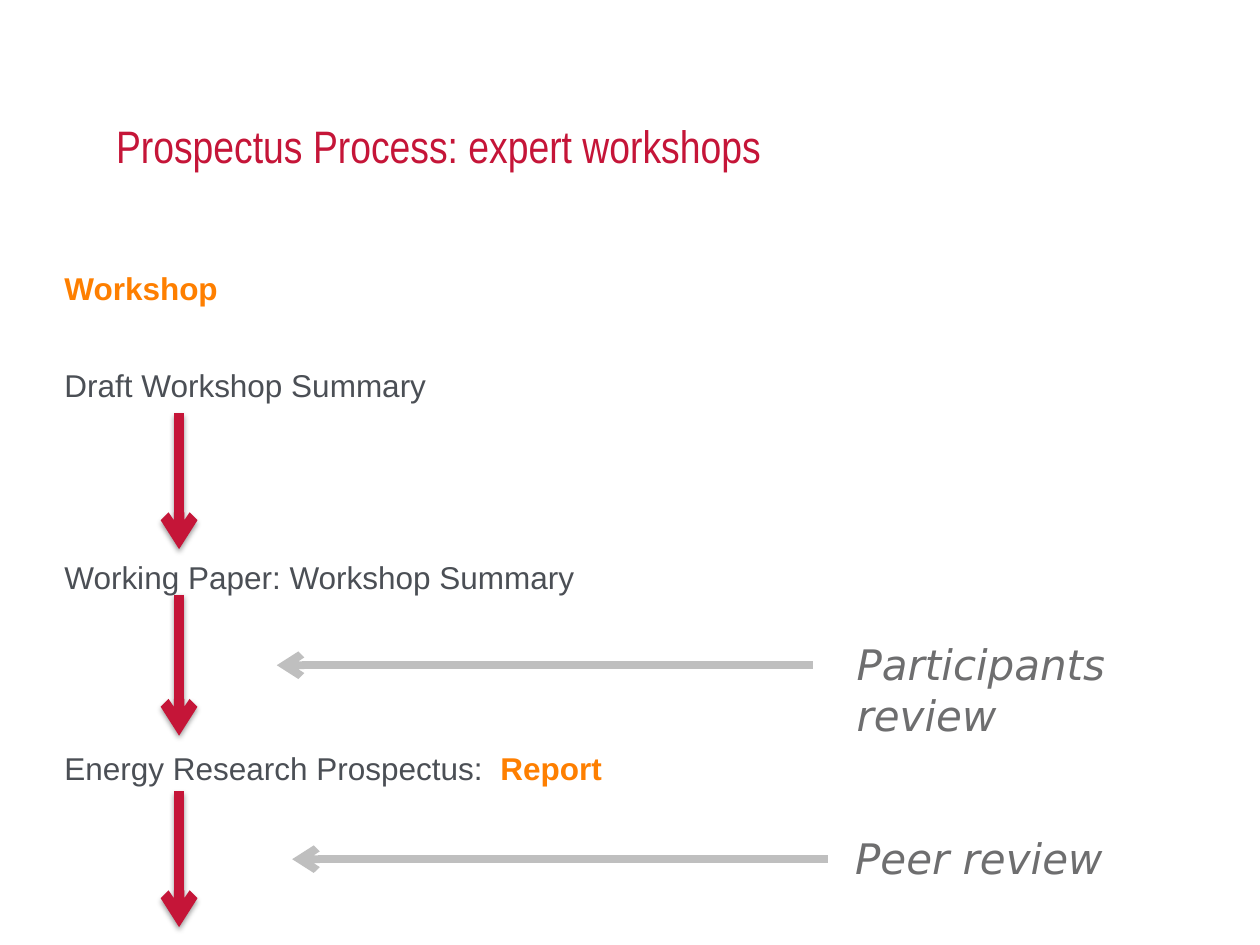
import pptx
import pptx.dml.color
import pptx.enum.shapes
import pptx.enum.text
import pptx.oxml
import pptx.oxml.ns
import pptx.util
from pptx.util import Cm, Pt

RGBColor = pptx.dml.color.RGBColor
CRIMSON = RGBColor(0xC5, 0x15, 0x38)
ORANGE = RGBColor(0xFE, 0x7F, 0x00)
SLATE = RGBColor(0x4B, 0x4F, 0x55)
GREY = RGBColor(0x6E, 0x6E, 0x6F)
SILVER = RGBColor(0xBF, 0xBF, 0xBF)

TITLE = {"name": "Arial Narrow", "size": Pt(26), "color": CRIMSON, "bold": False}
STEP = {"name": "Arial", "size": Pt(18), "color": SLATE, "bold": False}
OUTPUT = {**STEP, "color": ORANGE, "bold": True}
REVIEW = {"name": "DejaVu Sans", "size": Pt(24), "color": GREY, "italic": True}

NAMESPACE = pptx.oxml.ns.nsdecls("a")
ARROWHEAD = f'<a:tailEnd {NAMESPACE} type="arrow"/>'
NO_EFFECT = f"<a:effectLst {NAMESPACE}/>"
SHADOW = (
    f'<a:effectLst {NAMESPACE}><a:outerShdw blurRad="39370" dist="20320" '
    'dir="5400000" rotWithShape="0"><a:srgbClr val="000000">'
    '<a:alpha val="38000"/></a:srgbClr></a:outerShdw></a:effectLst>'
)

STEP_GAP = 18
ROW_PITCH = 54
STEPS = [
    ([("Workshop", OUTPUT)], 0),
    ([("Draft Workshop Summary", STEP)], 1),
    ([("Working Paper: Workshop Summary", STEP)], 1),
    ([("Energy Research Prospectus:  ", STEP), ("Report", OUTPUT)], 0),
]
STEP_ARROWS = [(8.33, 11.07), (11.99, 14.83), (15.95, 18.69)]
REVIEWS = [
    ("Participants review", 17.02, 12.75, 16.38, 13.41),
    ("Peer review", 16.99, 16.66, 16.69, 17.32),
]


class ProcessSlide:
    def __init__(self, deck):
        self.page = deck.slides.add_slide(deck.slide_layouts[5])

    def add_span(self, para, text, style):
        span = para.add_run()
        span.text = text
        for key, value in style.items():
            if key == "color":
                span.font.color.rgb = value
            else:
                setattr(span.font, key, value)

    def format_frame(self, frame, margin, anchor):
        values = {
            "word_wrap": True,
            "auto_size": pptx.enum.text.MSO_AUTO_SIZE.NONE,
            "vertical_anchor": anchor,
        }
        if margin is not None:
            for side in ("left", "top", "right", "bottom"):
                values[f"margin_{side}"] = margin
        for key, value in values.items():
            setattr(frame, key, value)

    def add_title(self, text, left, top, width, height):
        title = self.page.shapes.title
        place = {"left": left, "top": top, "width": width, "height": height}
        for key, value in place.items():
            setattr(title, key, Cm(value))
        self.format_frame(title.text_frame, 0, pptx.enum.text.MSO_ANCHOR.BOTTOM)
        para = title.text_frame.paragraphs[0]
        para.alignment = pptx.enum.text.PP_ALIGN.LEFT
        self.add_span(para, text, TITLE)

    def add_box(self, left, top, width, height, margin=None):
        box = self.page.shapes.add_textbox(Cm(left), Cm(top), Cm(width), Cm(height))
        self.format_frame(box.text_frame, margin, pptx.enum.text.MSO_ANCHOR.TOP)
        return box.text_frame

    def add_steps(self, steps, left, top, width, height):
        frame = self.add_box(left, top, width, height, 0)
        for index, (spans, skipped_rows) in enumerate(steps):
            para = frame.add_paragraph() if index else frame.paragraphs[0]
            spacing = {
                "line_spacing": 1.5,
                "space_before": Pt(5 if index else 0),
                "space_after": Pt(STEP_GAP + skipped_rows * ROW_PITCH),
            }
            for key, value in spacing.items():
                setattr(para, key, value)
            for text, style in spans:
                self.add_span(para, text, style)

    def add_label(self, text, left, top):
        frame = self.add_box(left, top, 8.38, 1.3)
        self.add_span(frame.paragraphs[0], text, REVIEW)

    def add_arrow(self, start, end, color, weight, effect):
        arrow = self.page.shapes.add_connector(
            pptx.enum.shapes.MSO_CONNECTOR.STRAIGHT,
            *(Cm(value) for value in (*start, *end)),
        )
        arrow.line.color.rgb = color
        arrow.line.width = Pt(weight)
        arrow.line._get_or_add_ln().append(pptx.oxml.parse_xml(ARROWHEAD))
        arrow._element.spPr.append(pptx.oxml.parse_xml(effect))


def main():
    deck = pptx.Presentation()
    deck.slide_width, deck.slide_height = Cm(25.4), Cm(19.05)
    slide = ProcessSlide(deck)
    slide.add_title("Prospectus Process: expert workshops", 2.34, 1.7, 20.96, 1.78)
    slide.add_steps(STEPS, 1.3, 5.05, 22.86, 13.28)
    for text, left, top, arrow_start, arrow_y in REVIEWS:
        slide.add_label(text, left, top)
        slide.add_arrow(
            (arrow_start, arrow_y), (arrow_start - 10.8, arrow_y), SILVER, 4.5, NO_EFFECT
        )
    for top, bottom in STEP_ARROWS:
        slide.add_arrow((3.61, top), (3.61, bottom), CRIMSON, 6, SHADOW)
    deck.save("out.pptx")


if __name__ == "__main__":
    main()
